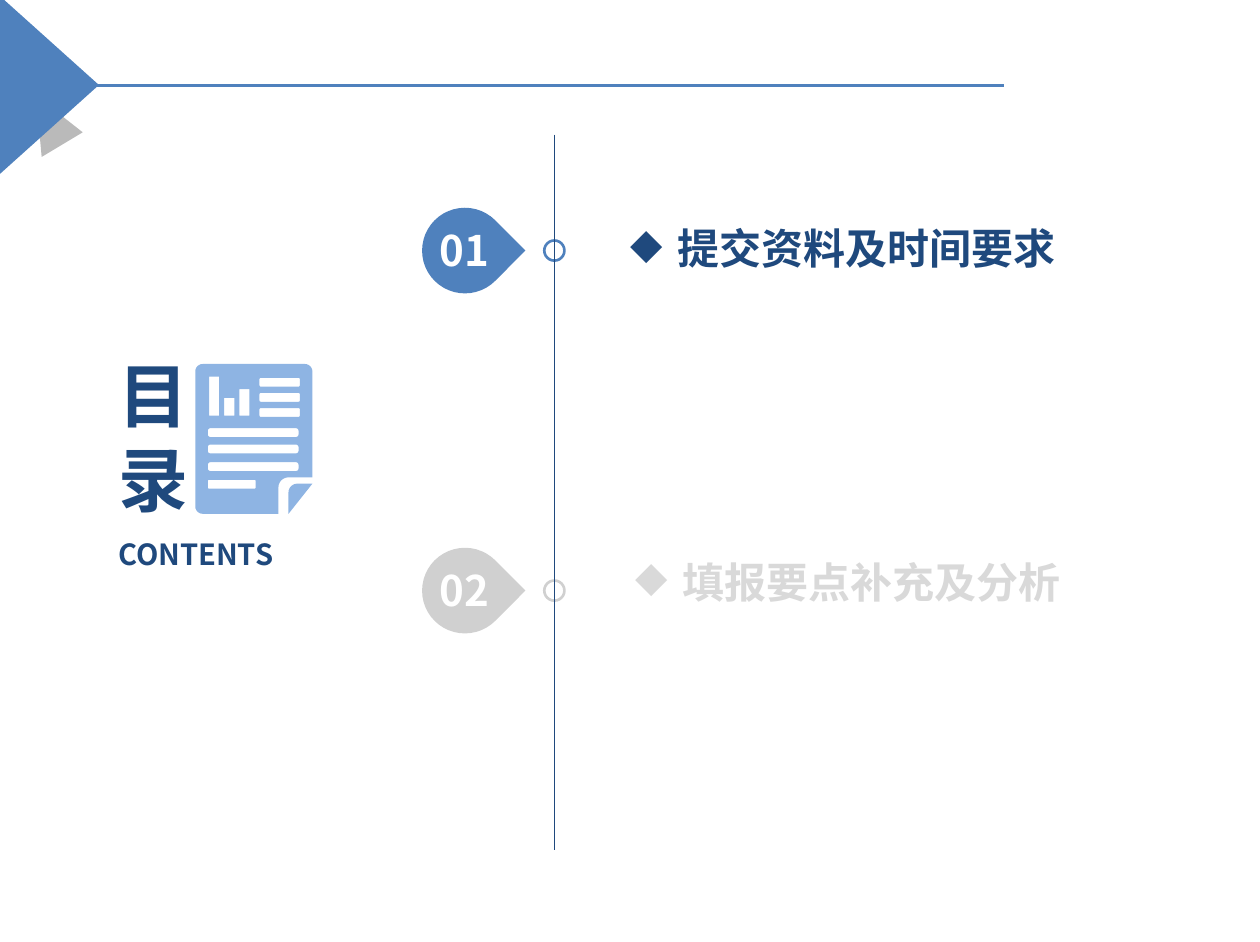
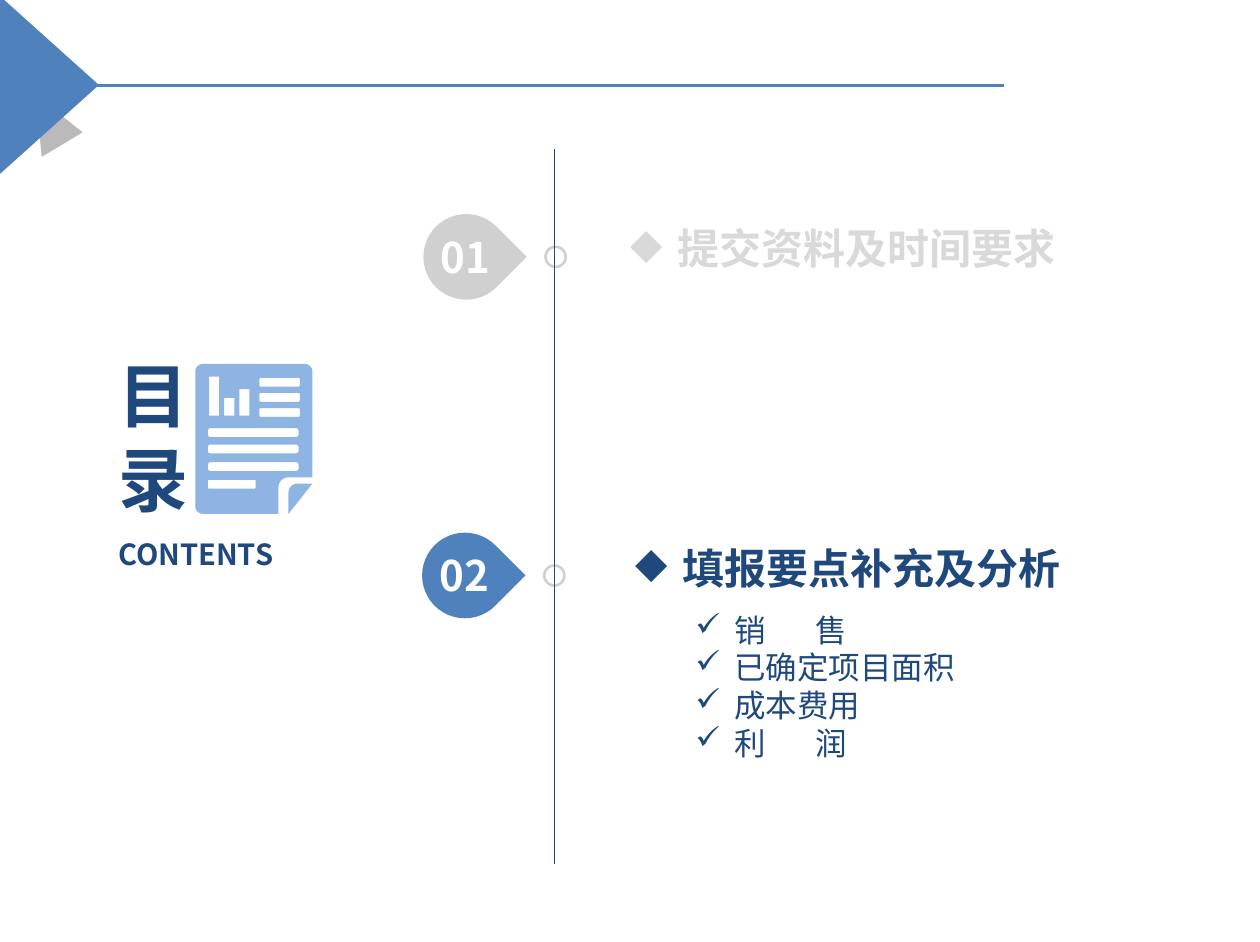
from math import cos, pi, sin

from lxml import etree
from pptx import Presentation
from pptx.dml.color import RGBColor
from pptx.enum import shapes, text
from pptx.oxml.ns import qn
from pptx.util import Inches, Pt

FONT = "Noto Sans CJK SC"
HEX = {"blue": "4F81BD", "navy": "1F497D", "sky": "8EB4E3", "grey": "D0D0D0",
       "pale": "D9D9D9", "dark": "404040", "white": "FFFFFF"}
KIND = shapes.MSO_SHAPE
MID, END = text.MSO_ANCHOR.MIDDLE, text.MSO_ANCHOR.BOTTOM
MID_ROW, FULL = text.PP_ALIGN.CENTER, text.PP_ALIGN.JUSTIFY

# Content: each item has its number, heading, badge place, ring tone, heading box
SLIDES = [
    {"axis": 1.07, "live": "01", "checks": [], "items": [
        ("01", "提交资料及时间要求", (3.35, 1.65), "blue", (5, 1.56, 3.62, 0.61)),
        ("02", "填报要点补充及分析", (3.35, 4.35), "grey", (5.04, 4.21, 4.68, 0.61))]},
    {"axis": 1.18, "live": "02",
     "checks": ["销\t售", "已确定项目面积", "成本费用", "利\t润"], "items": [
        ("01", "提交资料及时间要求", (3.36, 1.7), "grey", (5, 1.56, 3.62, 0.61)),
        ("02", "填报要点补充及分析", (3.35, 4.23), "grey", (5.04, 4.23, 4.68, 0.48))]},
]

# Report icon: white bars as left, top, width, height, corner radius
BARS = ([(1.65, y, 0.72, 0.07, 0.02) for y in (3.4, 3.53, 3.67)]
        + [(1.65, 3.81, 0.38, 0.07, 0.01)]
        + [(2.06, y, 0.32, 0.07, 0.01) for y in (3, 3.12, 3.24)]
        + [(x, y, 0.08, 3.3 - y, 0) for x, y in ((1.66, 2.99), (1.78, 3.16), (1.9, 3.09))])


def color(name):
    return RGBColor.from_string(HEX[name])


def arc(x, y, r, start, turn=90):
    """Points of an arc about x, y; angles run clockwise from the right."""
    steps = [(start + turn * i / 6) * pi / 180 for i in range(7)]
    return [(x + r * cos(a), y + r * sin(a)) for a in steps]


def bar(x, y, w, h, r):
    return (arc(x + r, y + r, r, 180) + arc(x + w - r, y + r, r, 270)
            + arc(x + w - r, y + h - r, r, 0) + arc(x + r, y + h - r, r, 90))


PAGE = (arc(1.61, 2.95, 0.06, 180) + arc(2.42, 2.95, 0.06, 270)
        + [(2.48, 3.79)] + arc(2.29, 3.87, 0.08, 270, -90)
        + [(2.21, 4.08)] + arc(1.61, 4.02, 0.06, 90))
FOLD = [(2.48, 3.84), (2.29, 4.08)] + arc(2.36, 3.91, 0.07, 180)
ICON = [PAGE, FOLD] + [bar(*b) for b in BARS]


def add_shape(slide, kind, box, fill=None, line=None, turn=0):
    shape = slide.shapes.add_shape(kind, *map(Inches, box))
    shape.shadow.inherit = False
    shape.rotation = turn
    if fill:
        shape.fill.solid()
        shape.fill.fore_color.rgb = color(fill)
    else:
        shape.fill.background()
    if line:
        shape.line.color.rgb = color(line)
        shape.line.width = Pt(1.5)
    else:
        shape.line.fill.background()
    return shape


def add_line(slide, start, end, tone, width):
    line = slide.shapes.add_connector(
        shapes.MSO_CONNECTOR.STRAIGHT, *map(Inches, start + end))
    line.line.color.rgb = color(tone)
    line.line.width = Pt(width)
    etree.SubElement(line._element.spPr, qn("a:effectLst"))


def write(frame, lines, size, tone, bold=True, align=None, bullet=None, indent=0, tab=0):
    for i, words in enumerate(lines):
        para = frame.paragraphs[0] if i == 0 else frame.add_paragraph()
        if align is not None:
            para.alignment = align
        if bullet:
            props = para._p.get_or_add_pPr()
            props.set("marL", str(Inches(indent)))
            props.set("indent", str(-Inches(indent)))
            etree.SubElement(props, qn("a:buChar"), char=bullet)
            if "\t" in words:
                tabs = etree.SubElement(props, qn("a:tabLst"))
                etree.SubElement(tabs, qn("a:tab"), pos=str(Inches(tab)), algn="l")
        run = para.add_run()
        run.text = words
        run.font.size, run.font.bold, run.font.name = Pt(size), bold, FONT
        run.font.color.rgb = color(tone)
        etree.SubElement(run._r.get_or_add_rPr(), qn("a:ea"), typeface=FONT)


def add_text(slide, box, lines, size, tone, anchor=None, pad=False, **style):
    frame = slide.shapes.add_textbox(*map(Inches, box)).text_frame
    frame.word_wrap = True
    if anchor is not None:
        frame.vertical_anchor = anchor
    if not pad:
        frame.margin_left = frame.margin_right = frame.margin_top = frame.margin_bottom = 0
    write(frame, lines, size, tone, **style)


def add_band(slide):
    back = add_shape(slide, KIND.ISOSCELES_TRIANGLE, (0.19, 0.74, 0.38, 0.44), "dark", turn=329)
    back.adjustments[0] = 0.56
    tone = back._element.spPr.find(".//" + qn("a:srgbClr"))
    etree.SubElement(tone, qn("a:alpha"), val="36000")
    add_shape(slide, KIND.ISOSCELES_TRIANGLE, (-0.32, 0.28, 1.42, 0.79), "blue", turn=90)
    add_line(slide, (0.77, 0.68), (7.97, 0.68), "blue", 2)


def add_icon(slide):
    # The builder rounds points to whole units, so give them in EMU
    first, *rest = [[(Inches(x), Inches(y)) for x, y in path] for path in ICON]
    build = slide.shapes.build_freeform(*first[0])
    build.add_line_segments(first[1:])
    for path in rest:
        build.move_to(*path[0])
        build.add_line_segments(path[1:])
    icon = build.convert_to_shape()
    icon.shadow.inherit = False
    icon.fill.solid()
    icon.fill.fore_color.rgb = color("sky")
    icon.line.fill.background()


def add_label(slide):
    add_text(slide, (0.94, 4.26, 1.54, 0.27), ["CONTENTS"], 16.6, "navy", MID, align=FULL)
    add_text(slide, (0.94, 2.8, 0.49, 1.38), ["目录"], 40, "navy", align=MID_ROW)
    add_icon(slide)


def add_item(slide, item, live):
    num, head, (x, y), ring, box = item
    add_shape(slide, KIND.OVAL, (x + 0.97, y + 0.26, 0.16, 0.16), line=ring)
    fill = "blue" if live else "grey"
    add_shape(slide, KIND.TEAR, (x, y, 0.68, 0.68), fill, turn=44.9)
    disc = add_shape(slide, KIND.OVAL, (x + 0.01, y + 0.01, 0.65, 0.65), fill)
    disc.text_frame.word_wrap = False
    disc.text_frame.vertical_anchor = MID
    write(disc.text_frame, [num], 24, "white", align=MID_ROW)
    add_text(slide, box, [head], 24, "navy" if live else "pale", END,
             bullet="◆", indent=0.38)


def main():
    deck = Presentation()
    deck.slide_width, deck.slide_height = Inches(10), Inches(7.48)
    for data in SLIDES:
        slide = deck.slides.add_slide(deck.slide_layouts[6])
        add_band(slide)
        for item in data["items"]:
            add_item(slide, item, item[0] == data["live"])
        top = data["axis"]
        add_line(slide, (4.4, top), (4.4, top + 5.68), "navy", 0.75)
        add_label(slide)
        if data["checks"]:
            add_text(slide, (5.42, 4.8, 2.28, 1.31), data["checks"], 18, "navy", pad=True,
                     bold=False, bullet="✓", indent=0.31, tab=0.95)
    deck.save("out.pptx")


if __name__ == "__main__":
    main()
